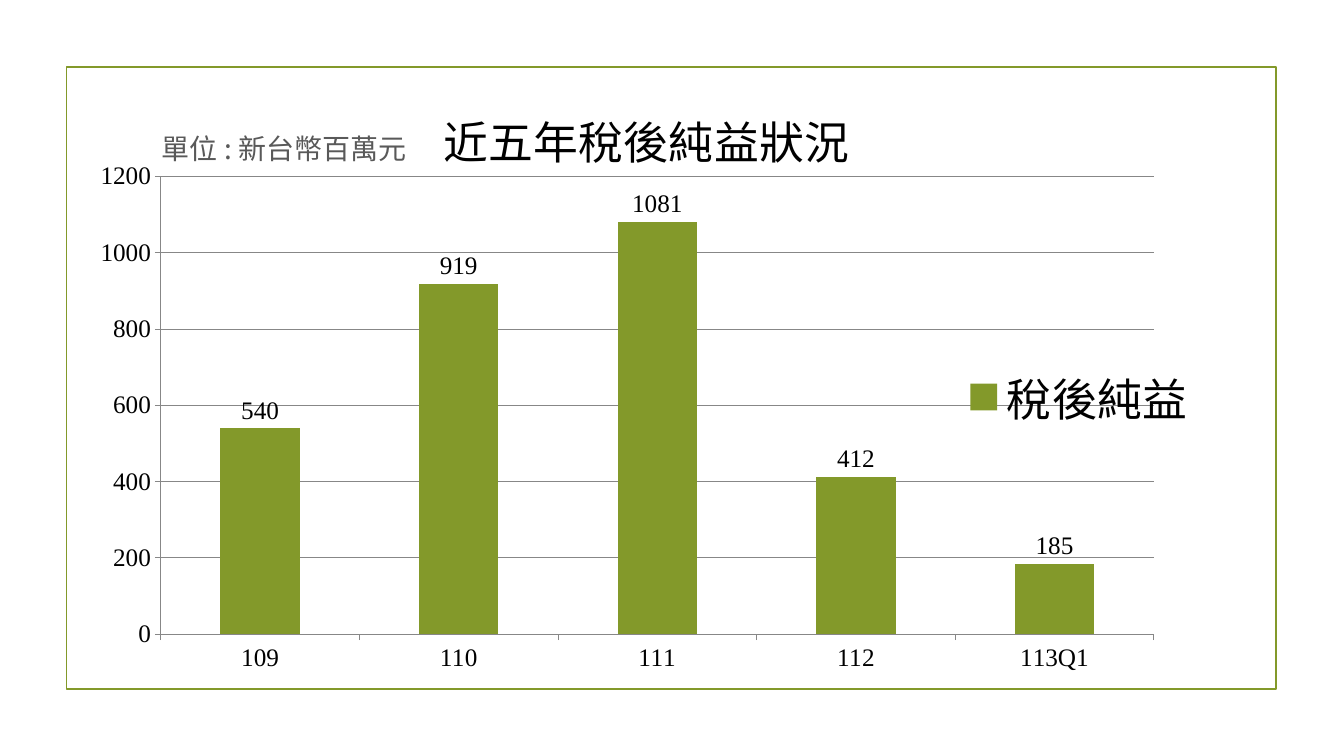
from lxml import etree
from pptx import Presentation
from pptx.chart.data import CategoryChartData
from pptx.dml.color import RGBColor
from pptx.enum.chart import XL_CHART_TYPE, XL_LABEL_POSITION, XL_LEGEND_POSITION, XL_TICK_MARK
from pptx.enum.shapes import MSO_SHAPE
from pptx.enum.text import PP_ALIGN
from pptx.oxml.ns import qn
from pptx.util import Pt

COLUMN = XL_CHART_TYPE.COLUMN_CLUSTERED
OUTSIDE_END = XL_LABEL_POSITION.OUTSIDE_END
LEGEND_RIGHT = XL_LEGEND_POSITION.RIGHT
TICK_OUT = XL_TICK_MARK.OUTSIDE
RECT = MSO_SHAPE.RECTANGLE
CENTER = PP_ALIGN.CENTER

CJK = "Noto Sans CJK SC"
SERIF = "Times New Roman"
GREEN, BLACK, GRAY, RULE = "83992A", "000000", "595959", "878787"

YEARS = ["109", "110", "111", "112", "113Q1"]
PROFITS = [540, 919, 1081, 412, 185]


def color(value):
    return RGBColor.from_string(value)


def style_font(font, size, fill, name):
    font.size = Pt(size)
    font.bold = False
    font.color.rgb = color(fill)
    font.name = name
    if name == CJK:
        # The East Asian typeface follows the Latin one.
        latin = font._element.find(qn("a:latin")) if hasattr(font, "_element") else font._rPr.find(qn("a:latin"))
        east_asian = etree.Element(qn("a:ea"), typeface=name)
        latin.addnext(east_asian)


def write(tf, text, size=20, fill=BLACK, name=CJK, align=CENTER):
    p = tf.paragraphs[0]
    p.alignment = align
    r = p.add_run()
    r.text = text
    style_font(r.font, size, fill, name)


def set_layout(parent, index, **values):
    """Place a chart part by fractions of the chart's box."""
    for old in parent.findall(qn("c:layout")):
        parent.remove(old)
    layout = etree.Element(qn("c:layout"))
    manual = etree.SubElement(layout, qn("c:manualLayout"))
    for tag, value in values.items():
        etree.SubElement(manual, qn("c:" + tag), val=str(value))
    parent.insert(index, layout)


def add_frame(slide, left, top, width, height):
    s = slide.shapes.add_shape(RECT, Pt(left), Pt(top), Pt(width), Pt(height))
    s.shadow.inherit = False
    s.fill.background()
    s.line.color.rgb = color(GREEN)
    s.line.width = Pt(1.25)


def style_axis(axis):
    axis.major_tick_mark = TICK_OUT
    axis.format.line.color.rgb = color(RULE)
    style_font(axis.tick_labels.font, 18, BLACK, SERIF)


def add_profit_chart(slide, left, top, width, height):
    data = CategoryChartData()
    data.categories = YEARS
    data.add_series("稅後純益", PROFITS)
    chart = slide.shapes.add_chart(
        COLUMN, Pt(left), Pt(top), Pt(width), Pt(height), data).chart
    style_font(chart.font, 18, BLACK, SERIF)

    chart.has_title = True
    title = chart.chart_title
    write(title.text_frame, "近五年稅後純益狀況", size=32)
    set_layout(title._element, 1, xMode="edge", yMode="edge", x=0.36, y=0.03)

    chart.has_legend = True
    legend = chart.legend
    legend.position = LEGEND_RIGHT
    legend.include_in_layout = False
    style_font(legend.font, 32, BLACK, CJK)
    set_layout(legend._element, 1, xMode="edge", yMode="edge", x=0.79, y=0.45)

    style_axis(chart.category_axis)
    style_axis(chart.value_axis)
    scale = chart.value_axis
    scale.minimum_scale, scale.maximum_scale, scale.major_unit = 0, 1200, 200
    scale.has_major_gridlines = True
    scale.major_gridlines.format.line.color.rgb = color(RULE)

    plot = chart.plots[0]
    plot.gap_width = 150
    plot.vary_by_categories = False
    fill = plot.series[0].format.fill
    fill.solid()
    fill.fore_color.rgb = color(GREEN)
    plot.has_data_labels = True
    labels = plot.data_labels
    labels.show_value = True
    labels.position = OUTSIDE_END
    style_font(labels.font, 18, BLACK, SERIF)
    set_layout(chart._chartSpace.chart.plotArea, 0, layoutTarget="inner",
               xMode="edge", yMode="edge", x=0.133, y=0.163, w=0.821, h=0.734)


def add_unit_note(slide, left, top, width, height):
    tf = slide.shapes.add_textbox(Pt(left), Pt(top), Pt(width), Pt(height)).text_frame
    tf.word_wrap = True
    write(tf, "單位 : 新台幣百萬元", fill=GRAY)


def main():
    prs = Presentation()
    prs.slide_width, prs.slide_height = Pt(960), Pt(540)
    slide = prs.slides.add_slide(prs.slide_layouts[6])
    add_frame(slide, 47.5, 48, 864, 444)
    add_profit_chart(slide, 0, 53.5, 864, 445.5)
    add_unit_note(slide, 87.5, 90.5, 231, 34.5)
    prs.save("out.pptx")


if __name__ == "__main__":
    main()
